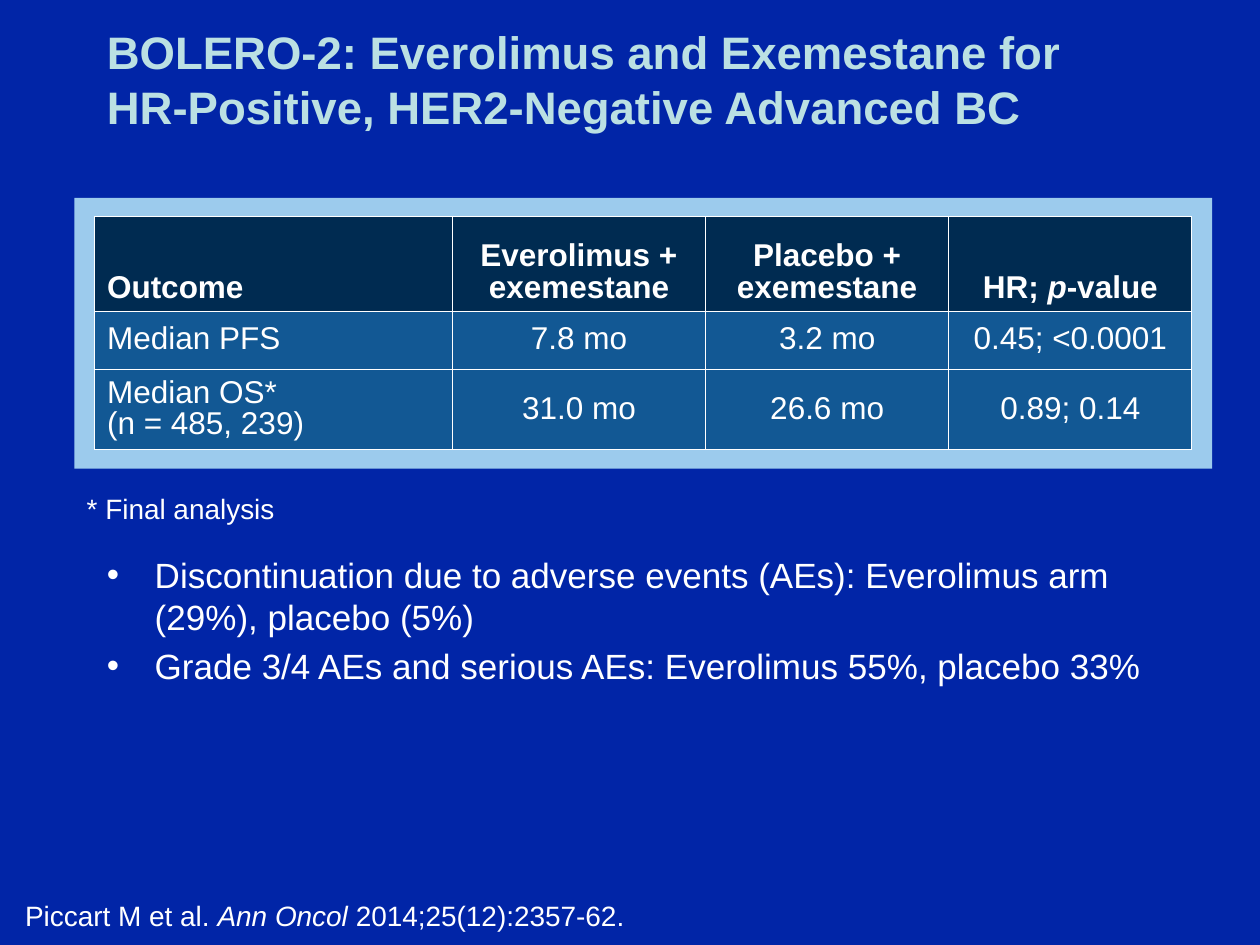
from lxml import etree
from pptx import Presentation
from pptx.dml.color import RGBColor
from pptx.enum.shapes import MSO_SHAPE
from pptx.enum.text import MSO_ANCHOR, PP_ALIGN
from pptx.oxml.ns import qn
from pptx.util import Inches, Pt

RECTANGLE = MSO_SHAPE.RECTANGLE
TOP, MIDDLE, BOTTOM = MSO_ANCHOR.TOP, MSO_ANCHOR.MIDDLE, MSO_ANCHOR.BOTTOM
LEFT, CENTER = PP_ALIGN.LEFT, PP_ALIGN.CENTER

FONT = "Arial"
COLORS = {
    "background": "0125A7",
    "title": "BBE0E3",
    "text": "FFFFFF",
    "frame": "9CCBED",
    "header": "002B51",
    "body": "125894",
    "border": "FFFFFF",
}

TITLE = "BOLERO-2: Everolimus and Exemestane for HR-Positive, HER2-Negative Advanced BC"
COLUMN_WIDTHS = [2.84, 2.01, 1.93, 1.93]
ROW_HEIGHTS = [0.75, 0.46, 0.64]
# Each cell is a list of (text, italic) runs; a newline in a run is a line break.
OUTCOMES = [
    [[("Outcome", False)], [("Everolimus + exemestane", False)],
     [("Placebo + exemestane", False)],
     [("HR; ", False), ("p", True), ("-value", False)]],
    [[("Median PFS", False)], [("7.8 mo", False)], [("3.2 mo", False)],
     [("0.45; <0.0001", False)]],
    [[("Median OS*\n(n = 485, 239)", False)], [("31.0 mo", False)],
     [("26.6 mo", False)], [("0.89; 0.14", False)]],
]
SAFETY_POINTS = [
    "Discontinuation due to adverse events (AEs): Everolimus arm (29%), placebo (5%)",
    "Grade 3/4 AEs and serious AEs: Everolimus 55%, placebo 33%",
]
CITATION = [("Piccart M et al. ", False), ("Ann Oncol ", True),
            ("2014;25(12):2357-62.", False)]


def rgb(name):
    return RGBColor.from_string(COLORS[name])


def add_runs(paragraph, runs, size, color="text", bold=False):
    for text, italic in runs:
        for index, line in enumerate(text.split("\n")):
            if index:
                paragraph.add_line_break()
            run = paragraph.add_run()
            run.text = line
            font = run.font
            font.name, font.size = FONT, Pt(size)
            font.bold, font.italic = bold, italic
            font.color.rgb = rgb(color)


def add_text_frame(slide, box, anchor=TOP):
    frame = slide.shapes.add_textbox(*map(Inches, box)).text_frame
    frame.word_wrap = True
    frame.vertical_anchor = anchor
    return frame


def add_title(slide, box):
    frame = add_text_frame(slide, box, MIDDLE)
    add_runs(frame.paragraphs[0], [(TITLE, False)], 26, "title", bold=True)


def set_borders(cell):
    properties = cell._tc.get_or_add_tcPr()
    for position, side in enumerate(("a:lnL", "a:lnR", "a:lnT", "a:lnB")):
        line = etree.Element(qn(side), w=str(Pt(0.75)))
        fill = etree.SubElement(line, qn("a:solidFill"))
        etree.SubElement(fill, qn("a:srgbClr"), val=COLORS["border"])
        properties.insert(position, line)


def add_outcome_table(slide, box):
    """Draw the pale frame in the box and the outcome table inside it."""
    left, top, width, height = box
    frame = slide.shapes.add_shape(RECTANGLE, *map(Inches, box))
    frame.shadow.inherit = False
    frame.fill.solid()
    frame.fill.fore_color.rgb = rgb("frame")
    frame.line.fill.background()

    table_box = (left + 0.16, top + 0.15, sum(COLUMN_WIDTHS), sum(ROW_HEIGHTS))
    table = slide.shapes.add_table(
        len(ROW_HEIGHTS), len(COLUMN_WIDTHS), *map(Inches, table_box)).table
    for column, column_width in zip(table.columns, COLUMN_WIDTHS):
        column.width = Inches(column_width)
    for row, row_height in zip(table.rows, ROW_HEIGHTS):
        row.height = Inches(row_height)

    for row_index, outcome in enumerate(OUTCOMES):
        is_header = row_index == 0
        for column_index, runs in enumerate(outcome):
            cell = table.cell(row_index, column_index)
            cell.fill.solid()
            cell.fill.fore_color.rgb = rgb("header" if is_header else "body")
            cell.vertical_anchor = BOTTOM if is_header else MIDDLE
            set_borders(cell)
            paragraph = cell.text_frame.paragraphs[0]
            paragraph.alignment = CENTER if column_index else LEFT
            paragraph.line_spacing = 0.9
            add_runs(paragraph, runs, 18, bold=is_header)


def add_footnote(slide, box):
    frame = add_text_frame(slide, box)
    add_runs(frame.paragraphs[0], [("* Final analysis", False)], 16)


def add_safety_points(slide, box):
    frame = add_text_frame(slide, box)
    indent = Inches(0.38)
    for index, point in enumerate(SAFETY_POINTS):
        paragraph = frame.add_paragraph() if index else frame.paragraphs[0]
        if index:
            paragraph.space_before = Pt(4)
        properties = paragraph._p.get_or_add_pPr()
        properties.set("marL", str(indent))
        properties.set("indent", str(-indent))
        etree.SubElement(properties, qn("a:buFont"), typeface=FONT)
        etree.SubElement(properties, qn("a:buChar"), char="•")
        add_runs(paragraph, [(point, False)], 20)


def add_citation(slide, box):
    frame = add_text_frame(slide, box, BOTTOM)
    frame.margin_left, frame.margin_bottom = Inches(0.2), Inches(0.1)
    add_runs(frame.paragraphs[0], CITATION, 16)


def main():
    presentation = Presentation()
    presentation.slide_width = Inches(10)
    presentation.slide_height = Inches(7.5)
    slide = presentation.slides.add_slide(presentation.slide_layouts[6])
    slide.background.fill.solid()
    slide.background.fill.fore_color.rgb = rgb("background")

    add_outcome_table(slide, (0.59, 1.57, 9.03, 2.15))
    add_title(slide, (0.75, 0, 8.5, 1.25))
    add_safety_points(slide, (0.75, 4.34, 8.5, 2.75))
    add_citation(slide, (0, 7.08, 10, 0.42))
    add_footnote(slide, (0.59, 3.85, 9.07, 0.37))
    presentation.save("out.pptx")


if __name__ == "__main__":
    main()
